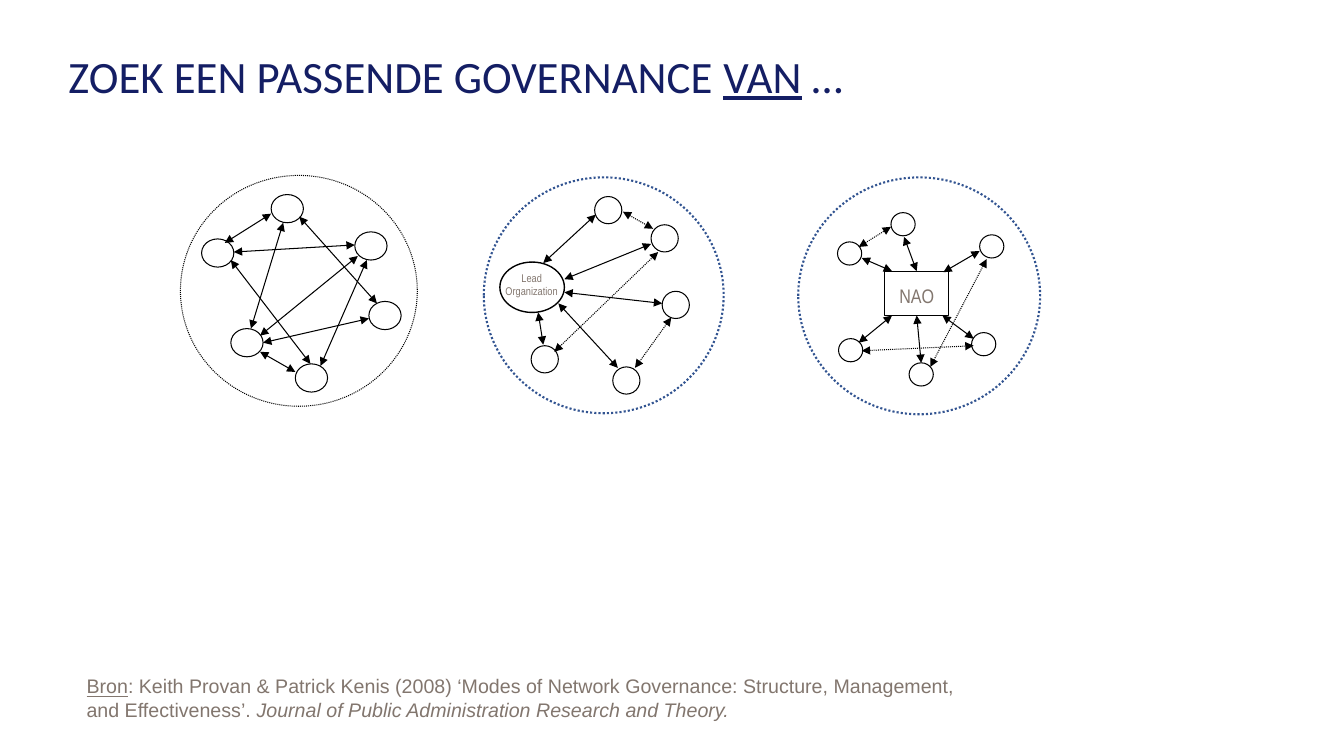
"""Build a slide comparing three forms of network governance."""
from lxml import etree
from pptx import Presentation
from pptx.dml.color import RGBColor
from pptx.enum.dml import MSO_LINE
from pptx.enum.shapes import MSO_CONNECTOR, MSO_SHAPE
from pptx.enum.text import MSO_AUTO_SIZE, PP_ALIGN
from pptx.oxml.ns import qn
from pptx.util import Cm, Pt

CM_PER_INCH = 2.54
DOTTED = MSO_LINE.ROUND_DOT
STRAIGHT = MSO_CONNECTOR.STRAIGHT
ELLIPSE, RECTANGLE = MSO_SHAPE.OVAL, MSO_SHAPE.RECTANGLE
LEFT, CENTER = PP_ALIGN.LEFT, PP_ALIGN.CENTER
GROW = MSO_AUTO_SIZE.SHAPE_TO_FIT_TEXT
TOP, BOTTOM = 0, 2
NAVY, TAUPE, BLUE, BLACK, WHITE = "141E64", "82766E", "325491", "000000", "FFFFFF"

SHARED_SIZE = (0.32, 0.28)
SHARED_NODES = [(2.69, 1.93), (2, 2.37), (2.29, 3.26), (3.66, 2.99), (2.93, 3.61), (3.52, 2.3)]
SHARED_TIES = [
    (2.32, 2.5, 3.52, 2.43), (2.23, 2.41, 2.69, 2.12), (2.49, 3.26, 2.81, 2.21),
    (2.58, 3.33, 3.55, 2.54), (2.61, 3.4, 3.66, 3.16), (2.58, 3.49, 2.93, 3.69),
    (2.97, 2.15, 3.74, 3.01), (2.29, 2.58, 3.08, 3.61), (3.64, 2.58, 3.18, 3.63),
]
LEAD_SIZE = (0.27, 0.27)
LEAD_NODES = [(5.9, 1.95), (5.27, 3.43), (6.57, 2.89), (6.08, 3.64), (6.46, 2.23)]
LEAD_TIES = [
    (5.39, 2.61, 5.91, 2.13), (5.6, 2.77, 6.46, 2.42), (5.6, 2.9, 6.57, 3.01),
    (5.54, 3.01, 6.13, 3.65), (5.34, 3.1, 5.39, 3.42),
]
LEAD_WEAK_TIES = [(6.18, 2.1, 6.48, 2.27), (5.5, 3.49, 6.53, 2.5), (6.3, 3.65, 6.66, 3.15)]
NAO_SIZE = (0.24, 0.23)
NAO_NODES = [(8.84, 2.11), (8.31, 2.4), (8.32, 3.36), (9.64, 3.3), (9.02, 3.6), (9.72, 2.33)]
NAO_TIES = [
    (9.36, 2.7, 9.72, 2.49), (8.85, 2.69, 8.55, 2.56),
    (8.85, 3.13, 8.52, 3.4), (9.35, 3.13, 9.66, 3.36),
]
NAO_WEAK_TIES = [(8.52, 2.45, 8.84, 2.25), (8.55, 3.48, 9.66, 3.43), (9.23, 3.64, 9.79, 2.57)]


def color(hex_string):
    return RGBColor.from_string(hex_string)


def lengths(*inches):
    return [Cm(value * CM_PER_INCH) for value in inches]


class NetworkSlide:
    def __init__(self, presentation):
        self.slide = presentation.slides.add_slide(presentation.slide_layouts[6])
        self.line_width = 0.75

    def style_line(self, line, line_color, width, dash):
        line.color.rgb = color(line_color)
        line.width = Pt(width)
        if dash:
            line.dash_style = dash

    def shape(self, kind, box, fill=None, line_color=BLACK, width=None, dash=None):
        shape = self.slide.shapes.add_shape(kind, *lengths(*box))
        shape.shadow.inherit = False
        if fill:
            shape.fill.solid()
            shape.fill.fore_color.rgb = color(fill)
        else:
            shape.fill.background()
        self.style_line(shape.line, line_color, width or self.line_width, dash)
        return shape

    def nodes(self, positions, size):
        for position in positions:
            self.shape(ELLIPSE, position + size, WHITE)

    def tie(self, ends, dash=None):
        connector = self.slide.shapes.add_connector(STRAIGHT, *lengths(*ends))
        self.style_line(connector.line, BLACK, self.line_width, dash)
        outline = connector.line._get_or_add_ln()
        for end in ("a:headEnd", "a:tailEnd"):
            etree.SubElement(outline, qn(end)).set("type", "triangle")
        etree.SubElement(connector._element.spPr, qn("a:effectLst"))
        return connector

    def ties(self, all_ends, dash=None):
        for ends in all_ends:
            self.tie(ends, dash)

    def text(self, box, pieces, font, size, text_color, alignment=LEFT):
        text_frame = self.slide.shapes.add_textbox(*lengths(*box)).text_frame
        text_frame.word_wrap = True
        paragraph = text_frame.paragraphs[0]
        paragraph.alignment = alignment
        for words, emphasis in pieces:
            for index, line in enumerate(words.split("\n")):
                if index:
                    paragraph.add_line_break()
                run = paragraph.add_run()
                run.text = line
                run.font.name = font
                run.font.size = Pt(size)
                run.font.color.rgb = color(text_color)
                if emphasis:
                    setattr(run.font, emphasis, True)
        return text_frame


def main():
    presentation = Presentation()
    presentation.slide_width, presentation.slide_height = Cm(33.87), Cm(19.05)
    page = NetworkSlide(presentation)

    title = page.text(
        (0.68, 0.52, 11.44, 0.62),
        [("ZOEK EEN PASSENDE GOVERNANCE ", None), ("VAN", "underline"), (" …", None)],
        "Calibri", 32, NAVY)
    title.margin_left = title.margin_right = title.margin_top = title.margin_bottom = 0
    title.paragraphs[0].line_spacing = 0.95
    citation = page.text(
        (0.76, 6.64, 9.35, 0.57),
        [("Bron", "underline"),
         (": Keith Provan & Patrick Kenis (2008) ‘Modes of Network Governance: "
          "Structure, Management,\nand Effectiveness’. ", None),
         ("Journal of Public Administration Research and Theory.", "italic")],
        "Arial", 14, TAUPE)
    citation.auto_size = GROW

    page.nodes(LEAD_NODES, LEAD_SIZE)
    page.shape(ELLIPSE, (4.96, 2.6, 0.64, 0.5), WHITE, width=1)
    page.text((4.88, 2.64, 0.79, 0.34), [("Lead Organization", None)],
              "Arial Narrow", 8, TAUPE, CENTER)
    page.ties(LEAD_TIES)
    page.ties(LEAD_WEAK_TIES, DOTTED)
    page.shape(ELLIPSE, (4.8, 1.76, 2.38, 2.34), line_color=BLUE, width=1.5, dash=DOTTED)

    nao = page.shape(RECTANGLE, (8.78, 2.69, 0.63, 0.44))
    page.nodes(NAO_NODES, NAO_SIZE)
    page.ties(NAO_TIES)
    page.tie((8.97, 2.35, 9.08, 2.69)).end_connect(nao, TOP)
    page.tie((9.11, 3.14, 9.14, 3.6)).begin_connect(nao, BOTTOM)
    page.ties(NAO_WEAK_TIES, DOTTED)
    page.shape(ELLIPSE, (7.92, 1.76, 2.4, 2.35), line_color=BLUE, width=1.5, dash=DOTTED)
    page.text((8.69, 2.77, 0.81, 0.43), [("NAO", None)], "Arial Narrow", 14, TAUPE, CENTER)

    page.nodes(SHARED_NODES, SHARED_SIZE)
    page.shape(ELLIPSE, (1.79, 1.74, 2.35, 2.29), dash=DOTTED)
    page.ties(SHARED_TIES)

    presentation.save("out.pptx")


if __name__ == "__main__":
    main()
